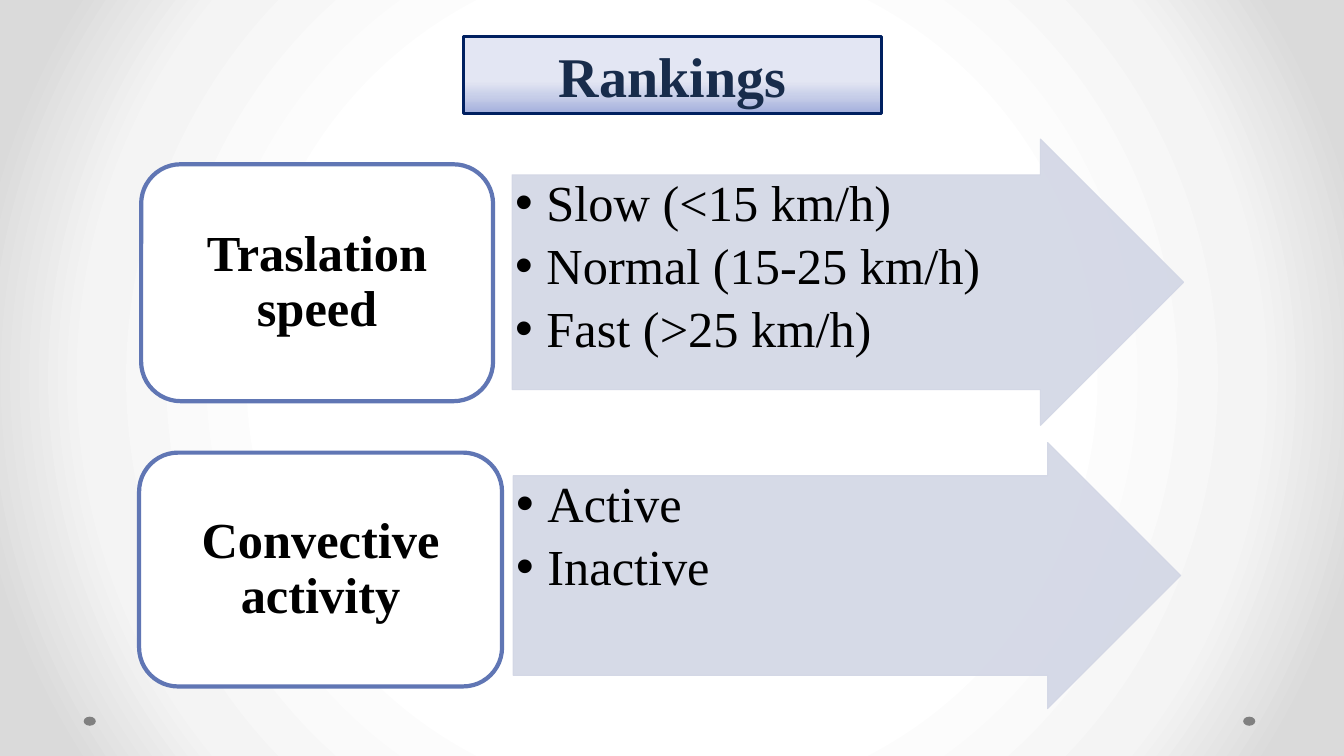
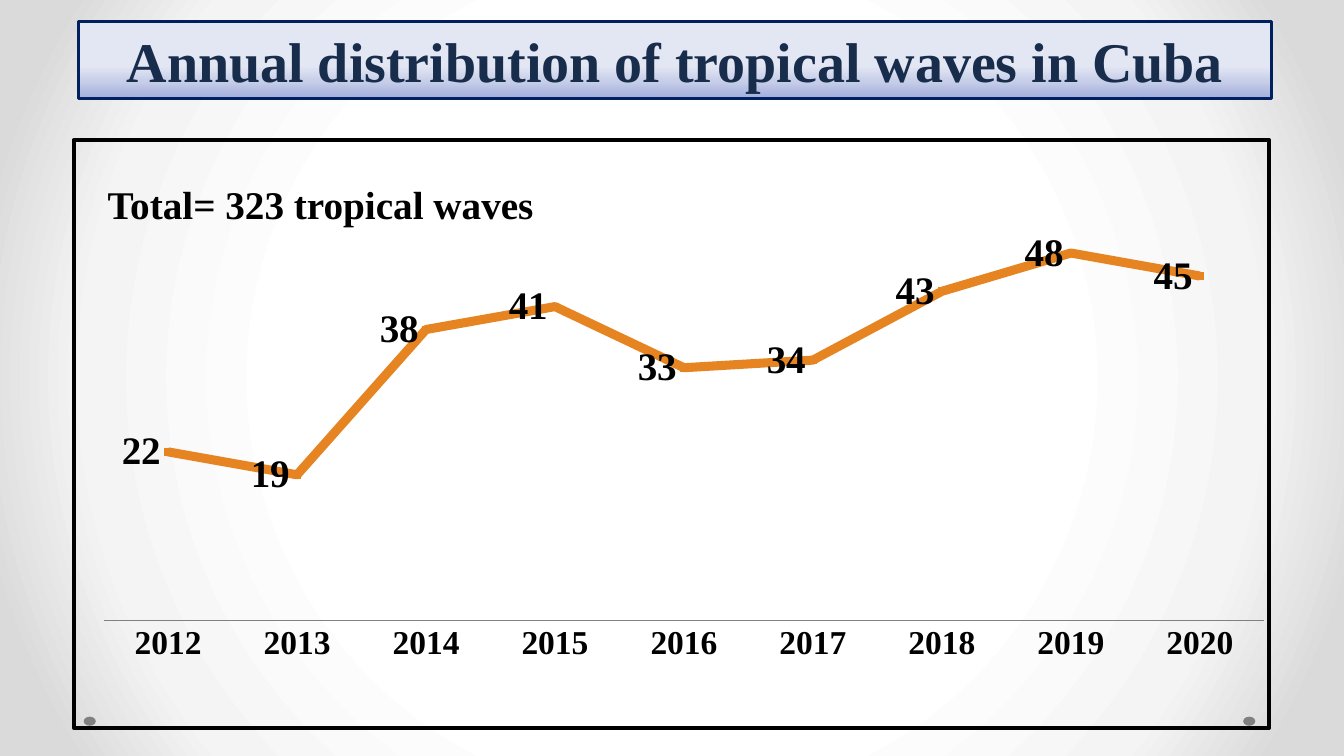
from lxml import etree
from pptx import Presentation
from pptx.chart.data import CategoryChartData
from pptx.dml.color import RGBColor
from pptx.enum.chart import XL_CHART_TYPE, XL_LABEL_POSITION, XL_MARKER_STYLE, XL_TICK_MARK
from pptx.enum.shapes import MSO_SHAPE
from pptx.enum.text import MSO_ANCHOR, MSO_AUTO_SIZE, PP_ALIGN
from pptx.oxml.ns import qn
from pptx.util import Inches, Pt

LINE_CHART = XL_CHART_TYPE.LINE_MARKERS
LABEL_LEFT = XL_LABEL_POSITION.LEFT
SQUARE = XL_MARKER_STYLE.SQUARE
NO_TICK = XL_TICK_MARK.NONE
RIGHT_ARROW, ROUNDED, ELLIPSE = MSO_SHAPE.RIGHT_ARROW, MSO_SHAPE.ROUNDED_RECTANGLE, MSO_SHAPE.OVAL
TOP, MIDDLE = MSO_ANCHOR.TOP, MSO_ANCHOR.MIDDLE
NO_FIT = MSO_AUTO_SIZE.NONE
CENTER, LEFT = PP_ALIGN.CENTER, PP_ALIGN.LEFT

BLACK = RGBColor(0x00, 0x00, 0x00)
WHITE = RGBColor(0xFF, 0xFF, 0xFF)
GRAY = RGBColor(0x80, 0x80, 0x80)
NAVY = RGBColor(0x00, 0x20, 0x60)
TITLE_INK = RGBColor(0x18, 0x2C, 0x4B)
CARD_LINE = RGBColor(0x60, 0x76, 0xB4)
ARROW_FILL = RGBColor(0xD2, 0xD6, 0xE5)
ORANGE = RGBColor(0xE6, 0x84, 0x22)
PAGE_STOPS = [(50, WHITE), (76, RGBColor(0xF4, 0xF4, 0xF4)), (92, RGBColor(0xDA, 0xDA, 0xDA))]
TITLE_STOPS = [(0, RGBColor(0xA2, 0xAE, 0xDC)), (22, RGBColor(0xC6, 0xCD, 0xE8)),
               (42, RGBColor(0xE3, 0xE6, 0xF3))]
FONT = "Times New Roman"
TITLE_HEIGHT = 0.77
ARROW_BODY = 0.75  # share of the arrow's height taken by its shaft

# Boxes are (left, top, width, height) in inches.
RANKINGS_TITLE = ("Rankings", (4.6, 0.36, 4.14, TITLE_HEIGHT))
RANKINGS = [
    {"name": "Traslation speed", "card": (1.4, 1.63, 3.49, 2.35), "arrow": (5.08, 1.38, 6.66, 2.84),
     "classes": ["Slow (<15 km/h)", "Normal (15-25 km/h)", "Fast (>25 km/h)"]},
    {"name": "Convective activity", "card": (1.38, 4.49, 3.6, 2.32), "arrow": (5.09, 4.39, 6.62, 2.64),
     "classes": ["Active", "Inactive"]},
]
WAVES_TITLE = ("Annual distribution of tropical waves in Cuba", (0.78, 0.21, 11.83, TITLE_HEIGHT))
WAVES_TOTAL = ("Total= 323 tropical waves", (0.97, 1.74, 4.97, 0.57))
WAVES_BOX = (0.71, 1.37, 11.9, 5.87)
WAVES_PLOT = {"x": 0.025, "y": 0.036, "w": 0.971, "h": 0.781}
FIRST_YEAR = 2012
WAVES = [22, 19, 38, 41, 33, 34, 43, 48, 45]
DOTS = [(0.83, 7.11, 0.12, 0.09), (12.33, 7.11, 0.12, 0.09)]


def inches(box):
    return [Inches(length) for length in box]


def set_all(target, values):
    for name, value in values.items():
        setattr(target, name, value)


def place(shape, box):
    set_all(shape, dict(zip(("left", "top", "width", "height"), inches(box))))


def child(parent, tag, **attributes):
    return etree.SubElement(parent, qn(tag), {name: str(value) for name, value in attributes.items()})


def set_gradient(fill, owner, stops, angle=None):
    """Give the fill these stops: linear at the angle, or circular from the centre."""
    fill.gradient()
    gradient = next(owner.iter(qn("a:gradFill")))
    for part in list(gradient):
        gradient.remove(part)
    stop_list = child(gradient, "a:gsLst")
    for percent, color in stops:
        child(child(stop_list, "a:gs", pos=percent * 1000), "a:srgbClr", val=color)
    if angle is None:
        center = dict.fromkeys("ltrb", 50000)
        child(child(gradient, "a:path", path="circle"), "a:fillToRect", **center)
    else:
        child(gradient, "a:lin", ang=angle * 60000, scaled=0)


def add_shape(page, kind, box, fill, line=None, width=0.75):
    shape = page.shapes.add_shape(kind, *inches(box))
    shape.shadow.inherit = False
    shape.fill.solid()
    shape.fill.fore_color.rgb = fill
    if line is None:
        shape.line.fill.background()
    else:
        shape.line.color.rgb = line
        shape.line.width = Pt(width)
    return shape


def write(shape, lines, size, color=BLACK, bold=False, frame=None, para_format=None):
    text = shape.text_frame
    set_all(text, {"word_wrap": True, "auto_size": NO_FIT, **(frame or {})})
    text.text = "\n".join(lines)
    for para in text.paragraphs:
        set_all(para, para_format or {})
        for span in para.runs:
            set_all(span.font, {"name": FONT, "size": Pt(size), "bold": bold})
            span.font.color.rgb = color


def add_title(page, title):
    words, box = title
    banner = page.shapes.title
    place(banner, box)
    set_gradient(banner.fill, banner._element, TITLE_STOPS, angle=270)
    banner.line.color.rgb = NAVY
    banner.line.width = Pt(2.25)
    write(banner, [words], 40, TITLE_INK, True, {"vertical_anchor": MIDDLE}, {"alignment": CENTER})


def style_master(deck, page):
    """Set the shared background and move the corner dots to the master."""
    master = deck.slide_master
    set_gradient(master.background.fill, master._element, PAGE_STOPS)
    for number, box in enumerate(DOTS):
        dot = add_shape(page, ELLIPSE, box, GRAY)._element
        dot.nvSpPr.cNvPr.set("id", str(100 + number))
        master.shapes._spTree.insert(2, dot)


def add_ranking(page, ranking, listing):
    left, top, width, height = ranking["arrow"]
    arrow = add_shape(page, RIGHT_ARROW, ranking["arrow"], ARROW_FILL, ARROW_FILL)
    arrow.adjustments[0], arrow.adjustments[1] = ARROW_BODY, 0.5
    for color in arrow._element.spPr.iter(qn("a:srgbClr")):
        child(color, "a:alpha", val=90000)

    page.shapes._spTree.append(listing._element)  # the list lies over its arrow
    margin = height * (1 - ARROW_BODY) / 2
    place(listing, (left, top + margin, width - height * 3 / 8, height * ARROW_BODY))
    insets = dict.fromkeys(("margin_left", "margin_top", "margin_right", "margin_bottom"), Inches(0.03))
    write(listing, ranking["classes"], 36, frame={"vertical_anchor": TOP, **insets},
          para_format={"alignment": LEFT, "line_spacing": 0.9, "space_before": Pt(0),
                       "space_after": Pt(6.2)})
    for para in listing.text_frame.paragraphs:
        properties = para._p.get_or_add_pPr()
        properties.set("marL", str(Inches(0.31)))
        properties.set("indent", str(-Inches(0.31)))
        child(properties, "a:buFont", typeface="Arial")
        child(properties, "a:buChar", char="•")

    card = add_shape(page, ROUNDED, ranking["card"], WHITE, CARD_LINE, 3)
    write(card, [ranking["name"]], 36, bold=True,
          frame={"vertical_anchor": MIDDLE, "margin_left": Inches(0.26), "margin_right": Inches(0.26)},
          para_format={"alignment": CENTER, "line_spacing": 0.9})


def frame_chart(chart):
    """Fix the inner plot area and draw a black border around an unfilled chart."""
    space = chart._chartSpace
    plot_area = next(space.iter(qn("c:plotArea")))
    for old in plot_area.findall(qn("c:layout")):
        plot_area.remove(old)
    layout = etree.Element(qn("c:layout"))
    plot_area.insert(0, layout)
    manual = child(layout, "c:manualLayout")
    child(manual, "c:layoutTarget", val="inner")
    for name in "xy":
        child(manual, f"c:{name}Mode", val="edge")
    for name, share in WAVES_PLOT.items():
        child(manual, f"c:{name}", val=share)

    border = etree.Element(qn("c:spPr"))
    child(border, "a:noFill")
    line = child(border, "a:ln", w=Pt(3))
    child(child(line, "a:solidFill"), "a:srgbClr", val=BLACK)
    space.find(qn("c:chart")).addnext(border)
    if space.find(qn("c:roundedCorners")) is None:
        corners = etree.Element(qn("c:roundedCorners"), val="0")
        space.find(qn("c:date1904")).addnext(corners)


def add_waves_chart(page):
    data = CategoryChartData()
    data.categories = [str(FIRST_YEAR + index) for index in range(len(WAVES))]
    data.add_series("Series 1", WAVES)
    chart = page.shapes.add_chart(LINE_CHART, *inches(WAVES_BOX), data).chart
    set_all(chart, {"has_title": False, "has_legend": False})
    set_all(chart.font, {"name": "Arial", "size": Pt(16), "bold": True})
    chart.font.color.rgb = BLACK
    frame_chart(chart)

    set_all(chart.value_axis, {"visible": False, "has_major_gridlines": False,
                               "minimum_scale": 0, "maximum_scale": 60})
    years = chart.category_axis
    set_all(years, {"major_tick_mark": NO_TICK, "minor_tick_mark": NO_TICK})
    years.format.line.color.rgb = GRAY

    plot = chart.plots[0]
    plot.vary_by_categories = False
    series = plot.series[0]
    series.smooth = False
    series.format.line.color.rgb = ORANGE
    series.format.line.width = Pt(6.5)
    set_all(series.marker, {"style": SQUARE, "size": 5})
    series.marker.format.fill.solid()
    series.marker.format.fill.fore_color.rgb = ORANGE
    series.marker.format.line.fill.background()
    labels = series.data_labels
    set_all(labels, {"show_value": True, "position": LABEL_LEFT})
    for font, size in ((years.tick_labels.font, 24), (labels.font, 28)):
        set_all(font, {"name": FONT, "size": Pt(size), "bold": True})
        font.color.rgb = BLACK


def main():
    deck = Presentation()
    deck.slide_width, deck.slide_height = Inches(13.33), Inches(7.5)
    two_lists, title_only = deck.slide_layouts[3], deck.slide_layouts[5]

    page = deck.slides.add_slide(two_lists)
    style_master(deck, page)
    add_title(page, RANKINGS_TITLE)
    for index, ranking in enumerate(RANKINGS, start=1):
        add_ranking(page, ranking, page.placeholders[index])

    page = deck.slides.add_slide(title_only)
    add_title(page, WAVES_TITLE)
    add_waves_chart(page)
    words, box = WAVES_TOTAL
    write(page.shapes.add_textbox(*inches(box)), [words], 28, bold=True)

    deck.save("out.pptx")


if __name__ == "__main__":
    main()
